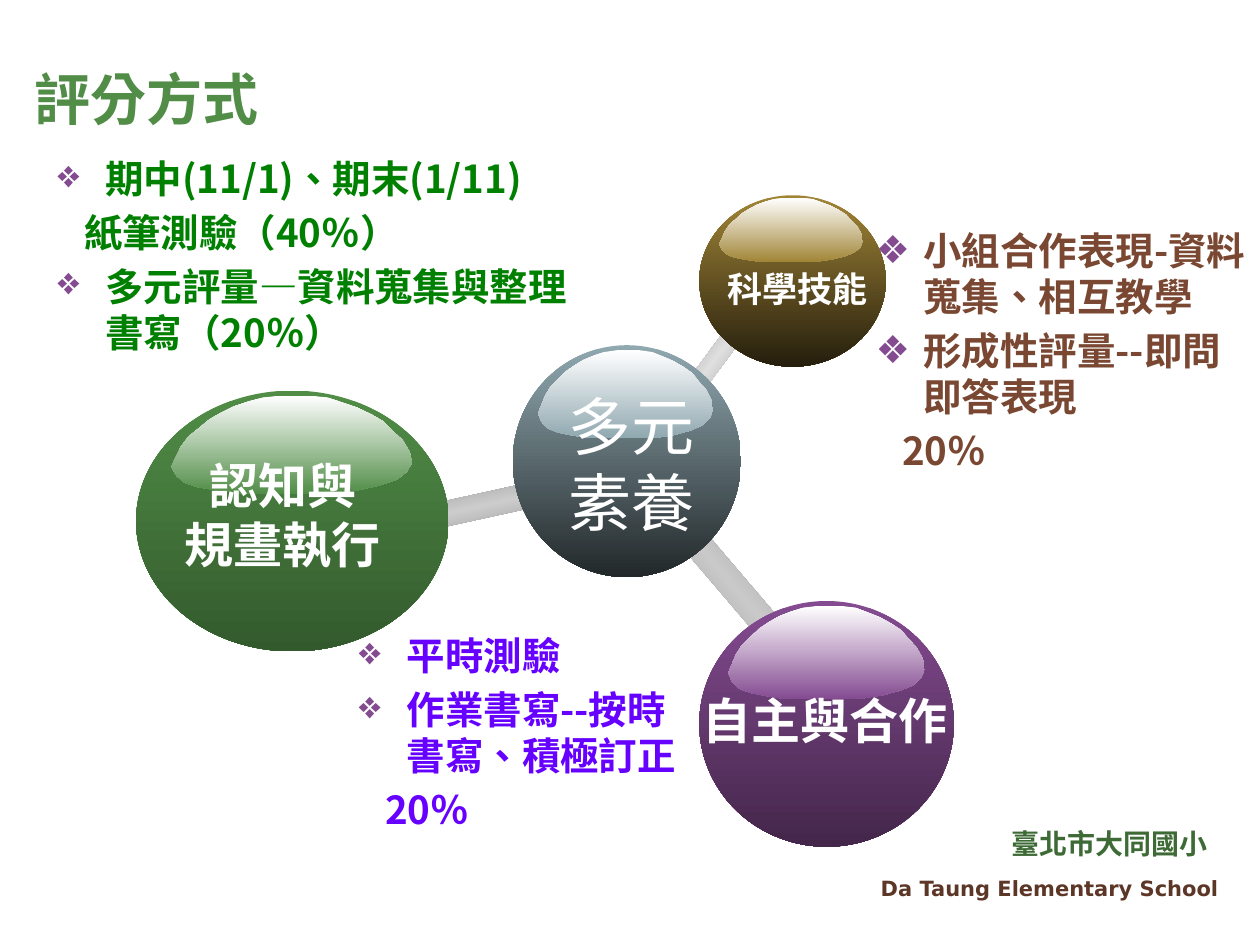
from lxml import etree
from pptx import Presentation, util as u
from pptx.dml.color import RGBColor
from pptx.enum import shapes, text
from pptx.oxml.ns import qn

CJK, LATIN = "Noto Sans CJK SC", "DejaVu Sans"
WHITE, BULLET = "FFFFFF", "844B91"
HANG, PLAIN_INDENT = 0.38, 0.21

TITLE = ("評分方式", (0.17, 0.47, 8.42, 0.62))
# Each item: has a bullet, wording
SKILL_LIST = ((6.85, 1.75, 3.23, 2.54), "7A4832", [
    (True, "小組合作表現-資料蒐集、相互教學"),
    (True, "形成性評量--即問即答表現"),
    (False, "20％")])
SIDE_LISTS = [
    ((2.75, 4.97, 2.83, 1.97), "6600FF", [
        (True, "平時測驗"),
        (True, "作業書寫--按時書寫、積極訂正"),
        (False, "20％")]),
    ((0.36, 1.18, 4.37, 1.33), "008000", [
        (True, "期中(11/1)、期末(1/11)"),
        (False, "紙筆測驗（40％）"),
        (True, "多元評量—資料蒐集與整理書寫（20％）")])]
SCHOOL = [
    ("Da Taung Elementary School", (6.42, 6.9, 3.35, 0.24), 12, LATIN, "5C3626"),
    ("臺北市大同國小", (7.76, 6.51, 1.92, 0.39), 16, CJK, "3D6A35")]
# Frame, rotation, colour along the middle
BARS = [
    ((5.23, 4.5, 1.11, 0.22), 229.5, "C9C9C9"),
    ((3.01, 3.97, 1.13, 0.2), 347.6, "CCCCCC"),
    ((5.38, 2.71, 0.69, 0.15), 306.6, "DFDFDF")]
# Ball frame, gloss frame, label frame, top and bottom colour, size, bold, lines
BALLS = [
    ((4.07, 2.74, 1.81, 1.84), (4.27, 2.78, 1.39, 0.7), (4.41, 3.03, 1.21, 1.31),
     "90A8B0", "22282A", 36, False, ["多元", "素養"]),
    ((5.55, 1.55, 1.48, 1.36), (5.71, 1.57, 1.14, 0.51), (5.67, 2.07, 1.32, 0.44),
     "A18537", "251E0D", 20, True, ["科學技能"]),
    ((1.08, 3.1, 2.48, 2.07), (1.36, 3.14, 1.91, 0.78), (1.36, 3.57, 1.77, 1.04),
     "518D47", "335A2D", 28, True, ["認知與", "規畫執行"]),
    ((5.55, 4.77, 2.02, 1.95), (5.78, 4.81, 1.56, 0.74), (5.47, 5.43, 2.16, 0.57),
     "844B91", "43264A", 28, True, ["自主與合作"])]
# Outline of a gloss, in percent of its frame
GLOSS = [
    (99, 57), (100, 68), (98, 77), (94, 85), (87, 91), (78, 96), (68, 99), (60, 100),
    (36, 100), (27, 99), (18, 96), (11, 93), (5, 88), (2, 81), (0, 72), (2, 62),
    (4, 52), (7, 42), (12, 32), (16, 24), (21, 17), (26, 11), (32, 6), (38, 2),
    (45, 0), (51, 0), (58, 0), (65, 2), (71, 7), (77, 12), (83, 19), (88, 26),
    (92, 36), (96, 45)]


def emu(frame):
    return [u.Inches(length) for length in frame]


def add_span(para, wording, size, color, bold=True, font=CJK):
    span = para.add_run()
    span.text = wording
    span.font.size, span.font.bold, span.font.name = u.Pt(size), bold, font
    span.font.color.rgb = RGBColor.from_string(color)
    props = span.font._element
    props.set("lang", "en-US" if font == LATIN else "zh-TW")
    east_asian = etree.Element(qn("a:ea"), typeface=font)
    props.find(qn("a:latin")).addnext(east_asian)


def next_para(frame, index):
    return frame.paragraphs[0] if index == 0 else frame.add_paragraph()


def fill_gradient(shape, *colors):
    """Fill from top to bottom with evenly spaced colours, without a line."""
    shape.shadow.inherit = False
    shape.line.fill.background()
    shape.fill.gradient()
    shape.fill.gradient_angle = 270
    stops = shape._element.spPr.find(qn("a:gradFill")).find(qn("a:gsLst"))
    for stop in list(stops):
        stops.remove(stop)
    for index, color in enumerate(colors):
        position = round(100000 * index / (len(colors) - 1))
        stop = etree.SubElement(stops, qn("a:gs"), pos=str(position))
        etree.SubElement(stop, qn("a:srgbClr"), val=color)


def place(shape, frame):
    shape.left, shape.top, shape.width, shape.height = emu(frame)


def set_bullet(para, bulleted):
    props = para._p.get_or_add_pPr()
    margin = HANG if bulleted else PLAIN_INDENT
    props.set("marL", str(u.Inches(margin)))
    props.set("indent", str(u.Inches(-HANG if bulleted else 0)))
    if bulleted:
        color = etree.SubElement(props, qn("a:buClr"))
        etree.SubElement(color, qn("a:srgbClr"), val=BULLET)
        etree.SubElement(props, qn("a:buChar"), char="❖")
    else:
        etree.SubElement(props, qn("a:buNone"))


def fill_list(box, color, items):
    frame = box.text_frame
    frame.word_wrap, frame.auto_size = True, text.MSO_AUTO_SIZE.NONE
    for index, (bulleted, wording) in enumerate(items):
        para = next_para(frame, index)
        set_bullet(para, bulleted)
        para.space_before = u.Pt(4.4 if index else 0)
        add_span(para, wording, 22, color)


def add_ball(page, ball, gloss, label, top, bottom, size, bold, lines):
    group = page.shapes.add_group_shape().shapes
    fill_gradient(group.add_shape(shapes.MSO_SHAPE.OVAL, *emu(ball)), top, bottom)

    left, upper, width, height = emu(gloss)
    points = [(left + width * x / 100, upper + height * y / 100) for x, y in GLOSS]
    outline = group.build_freeform(*points[0])
    outline.add_line_segments(points[1:], close=True)
    fill_gradient(outline.convert_to_shape(), WHITE, top)

    frame = group.add_textbox(*emu(label)).text_frame
    frame.word_wrap = False
    for index, line in enumerate(lines):
        para = next_para(frame, index)
        para.alignment = text.PP_ALIGN.CENTER
        add_span(para, line, size, WHITE, bold)


def main():
    deck = Presentation()
    deck.slide_width, deck.slide_height = u.Inches(10), u.Inches(7.5)
    page = deck.slides.add_slide(deck.slide_layouts[1])

    wording, frame = TITLE
    title = page.shapes.title
    place(title, frame)
    title.text_frame.auto_size = text.MSO_AUTO_SIZE.NONE
    title.text_frame.vertical_anchor = text.MSO_ANCHOR.MIDDLE
    para = title.text_frame.paragraphs[0]
    para.alignment = text.PP_ALIGN.LEFT
    add_span(para, wording, 32, "518D47")

    frame, color, items = SKILL_LIST
    body = page.placeholders[1]
    place(body, frame)
    fill_list(body, color, items)

    for wording, frame, size, font, color in SCHOOL:
        box = page.shapes.add_textbox(*emu(frame))
        box.text_frame.word_wrap = True
        para = box.text_frame.paragraphs[0]
        para.alignment = text.PP_ALIGN.RIGHT
        add_span(para, wording, size, color, font=font)

    for frame, rotation, middle in BARS:
        bar = page.shapes.add_shape(shapes.MSO_SHAPE.RECTANGLE, *emu(frame))
        bar.rotation = rotation
        fill_gradient(bar, "969696", middle, "969696")

    for ball in BALLS:
        add_ball(page, *ball)

    for frame, color, items in SIDE_LISTS:
        fill_list(page.shapes.add_textbox(*emu(frame)), color, items)

    deck.save("out.pptx")


if __name__ == "__main__":
    main()
